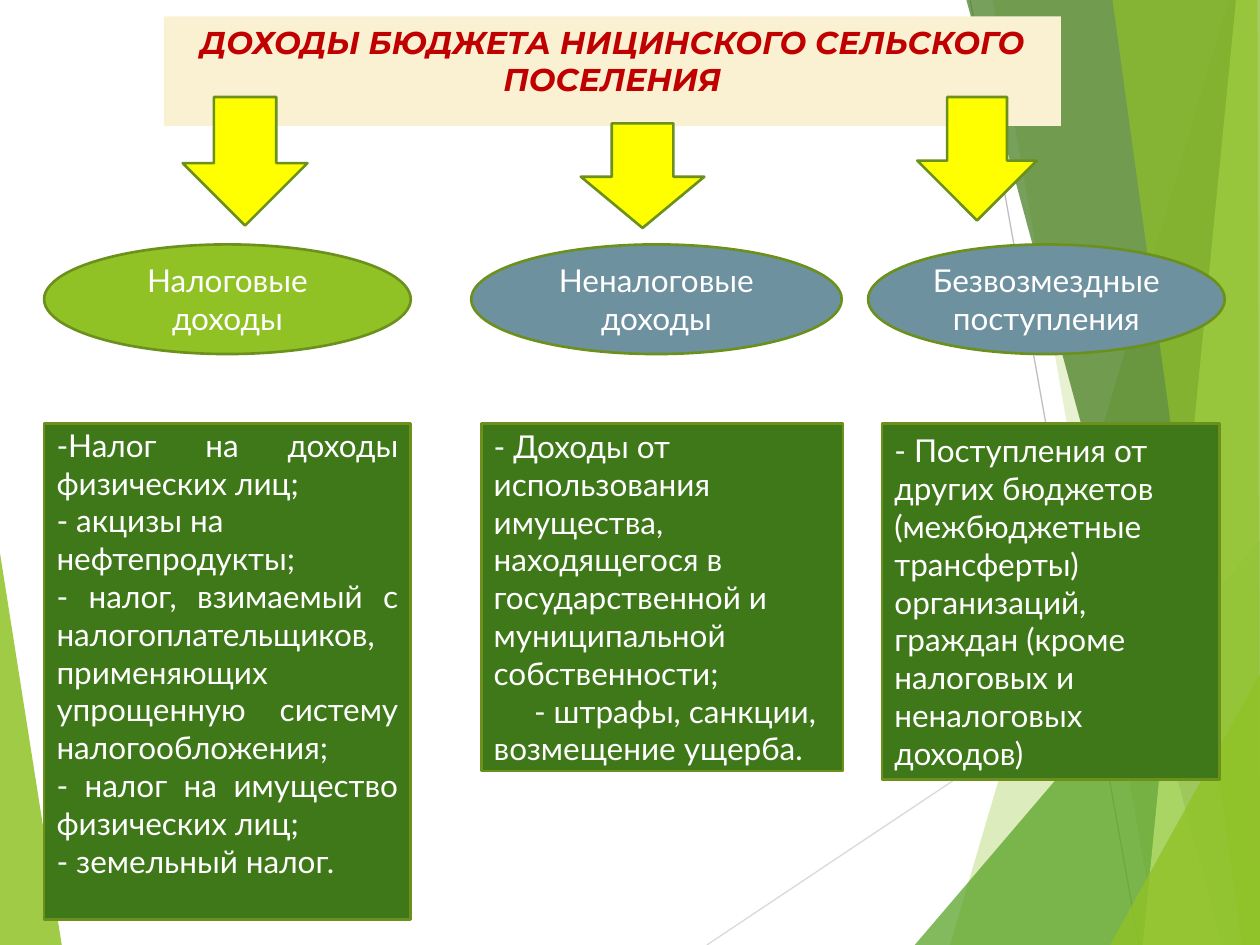
from dataclasses import dataclass

from lxml.etree import SubElement
from pptx import Presentation
from pptx.dml.color import RGBColor
from pptx.enum.shapes import MSO_CONNECTOR as Connector, MSO_SHAPE as Shape
from pptx.enum.text import MSO_ANCHOR as Anchor, MSO_AUTO_SIZE as AutoSize, PP_ALIGN as Align
from pptx.oxml.ns import qn
from pptx.util import Inches, Pt


@dataclass(frozen=True)
class Theme:
    lime: str = "90C226"
    green: str = "54A021"
    forest: str = "3F7819"
    pale: str = "C0E474"
    outline: str = "6B901C"
    steel: str = "6E91A0"
    arrow: str = "FFFF00"
    cream: str = "FAF1D2"
    heading: str = "C00000"
    text: str = "FFFFFF"
    light_ray: str = "D9D9D9"
    dark_ray: str = "BFBFBF"
    heading_font: str = "Montserrat"
    body_font: str = "Lato"
    size: float = 18
    border: float = 1.5
    hairline: float = 0.75


class SlideBuilder:
    columns, rows = 100, 75

    def __init__(self, deck, theme):
        self.theme = theme
        self.cell_width = deck.slide_width / self.columns
        self.cell_height = deck.slide_height / self.rows
        self.slide = deck.slides.add_slide(deck.slide_layouts[5])

    def point(self, column, row):
        return round(column * self.cell_width), round(row * self.cell_height)

    def box(self, left, top, width, height):
        return *self.point(left, top), *self.point(width, height)

    def paint(self, target, color):
        target.fill.solid()
        target.fill.fore_color.rgb = RGBColor.from_string(color)

    def facet(self, color, opacity, corners):
        start, *rest = [self.point(*corner) for corner in corners]
        outline = self.slide.shapes.build_freeform(*start, scale=1.0)
        outline.add_line_segments(rest, close=True)
        facet = outline.convert_to_shape()
        facet.shadow.inherit = False
        self.paint(facet, color)
        facet.line.fill.background()
        tint = facet._element.spPr.find(qn("a:solidFill"))[0]
        SubElement(tint, qn("a:alpha")).set("val", str(opacity * 1000))

    def ray(self, color, start, end):
        ray = self.slide.shapes.add_connector(
            Connector.STRAIGHT, *self.point(*start), *self.point(*end))
        ray.line.color.rgb = RGBColor.from_string(color)
        ray.line.width = Pt(self.theme.hairline)
        SubElement(ray._element.spPr, qn("a:effectLst"))

    def set_text(self, frame, paragraphs, font, color, align, emphasis=False):
        frame.text = "\n".join(paragraphs)
        frame.word_wrap = True
        for paragraph in frame.paragraphs:
            paragraph.alignment = align
            for run in paragraph.runs:
                run.font.name = font
                run.font.size = Pt(self.theme.size)
                run.font.bold = run.font.italic = emphasis
                run.font.color.rgb = RGBColor.from_string(color)

    def title(self, wording, area):
        title = self.slide.shapes.title
        title._element.getparent().append(title._element)
        title.left, title.top, title.width, title.height = self.box(*area)
        self.paint(title, self.theme.cream)
        frame = title.text_frame
        self.set_text(frame, [wording], self.theme.heading_font, self.theme.heading,
                      Align.CENTER, emphasis=True)
        frame.auto_size = AutoSize.NONE
        frame.vertical_anchor = Anchor.TOP

    def panel(self, kind, area, color):
        panel = self.slide.shapes.add_shape(kind, *self.box(*area))
        panel.shadow.inherit = False
        self.paint(panel, color)
        panel.line.color.rgb = RGBColor.from_string(self.theme.outline)
        panel.line.width = Pt(self.theme.border)
        return panel

    def arrow(self, area, head):
        self.panel(Shape.DOWN_ARROW, area, self.theme.arrow).adjustments[1] = head

    def source(self, wording, left, width, color):
        ellipse = self.panel(Shape.OVAL, (left, 19.4, width, 8.7), color)
        self.set_text(ellipse.text_frame, [wording], self.theme.body_font,
                      self.theme.text, Align.CENTER)

    def details(self, items, left, width, height):
        panel = self.panel(Shape.RECTANGLE, (left, 33.6, width, height), self.theme.forest)
        self.set_text(panel.text_frame, items, self.theme.body_font,
                      self.theme.text, Align.LEFT)
        return panel.text_frame


def main():
    deck = Presentation()
    deck.slide_width, deck.slide_height = Inches(10), Inches(7.5)
    theme = Theme()
    page = SlideBuilder(deck, theme)

    page.facet(theme.lime, 85, [(0, 43.9), (4.9, 75), (0, 75)])
    page.ray(theme.light_ray, (56.1, 75), (100, 45.7))
    page.ray(theme.dark_ray, (77, 0), (90.4, 75))
    facets = [
        (theme.lime, 30, [(97.5, 0), (75.4, 75), (100, 75), (100, 0)]),
        (theme.lime, 20, [(78.8, 0), (91.9, 75), (100, 75), (100, 0)]),
        (theme.green, 72, [(72.6, 75), (100, 42.9), (100, 75)]),
        (theme.forest, 70, [(76.7, 0), (97, 75), (100, 75), (100, 0)]),
        (theme.pale, 70, [(98.1, 0), (90.7, 75), (100, 75), (100, 0)]),
        (theme.lime, 65, [(88.3, 0), (98.6, 75), (100, 75), (99.8, 0)]),
        (theme.lime, 80, [(88.1, 75), (100, 53.5), (100, 75)]),
    ]
    for facet in facets:
        page.facet(*facet)

    page.title("ДОХОДЫ БЮДЖЕТА НИЦИНСКОГО СЕЛЬСКОГО ПОСЕЛЕНИЯ", (13, 1.3, 71.2, 8.7))

    page.arrow((14.5, 7.7, 9.9, 10.2), 0.5)
    page.arrow((46.1, 9.8, 9.8, 8.3), 0.49)
    page.arrow((72.8, 7.7, 9.5, 9.8), 0.5)

    page.source("Налоговые доходы", 3.5, 29.1, theme.lime)
    page.source("Неналоговые доходы", 37.4, 29.4, theme.steel)
    page.source("Безвозмездные поступления", 68.9, 28.3, theme.steel)

    taxes = page.details([
        "-Налог на доходы физических лиц;",
        "- акцизы на нефтепродукты;",
        "- налог, взимаемый с налогоплательщиков, применяющих упрощенную систему "
        "налогообложения;",
        "- налог на имущество физических лиц;",
        "- земельный налог.",
    ], 3.5, 29.1, 39.4)
    taxes.margin_bottom = Inches(0.35)
    for number, tax in enumerate(taxes.paragraphs):
        if number != 1:
            tax.alignment = Align.JUSTIFY

    non_taxes = page.details([
        "- Доходы от использования имущества, находящегося в государственной и "
        "муниципальной собственности;",
        "- штрафы, санкции, возмещение ущерба.",
    ], 38.2, 28.7, 27.6)
    fines = non_taxes.paragraphs[1]
    fines._p.get_or_add_pPr().set("indent", str(Inches(0.32)))

    page.details([
        "- Поступления от других бюджетов (межбюджетные трансферты) организаций, "
        "граждан (кроме налоговых и неналоговых доходов)",
    ], 70, 26.8, 28.3)

    deck.save("out.pptx")


if __name__ == "__main__":
    main()
